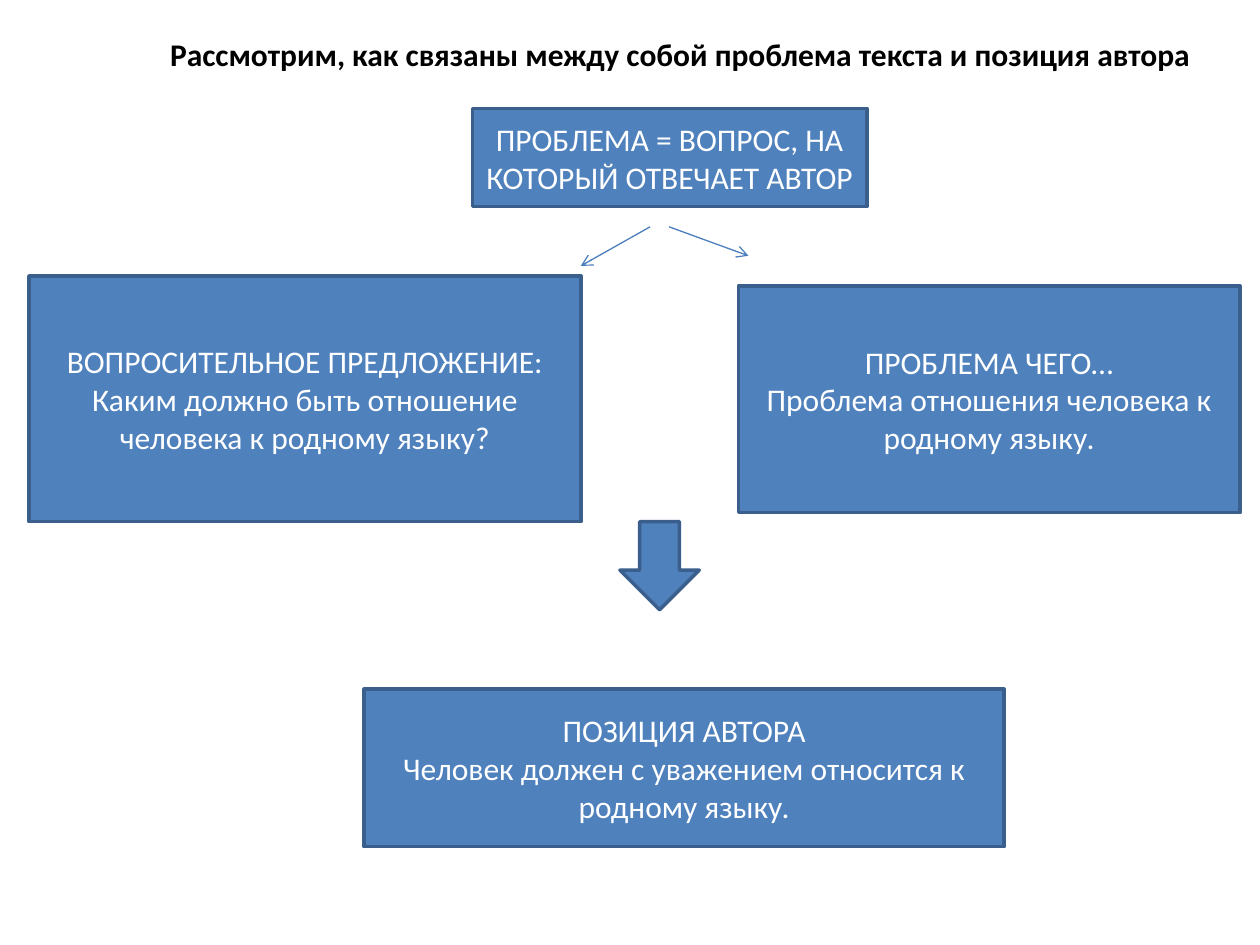
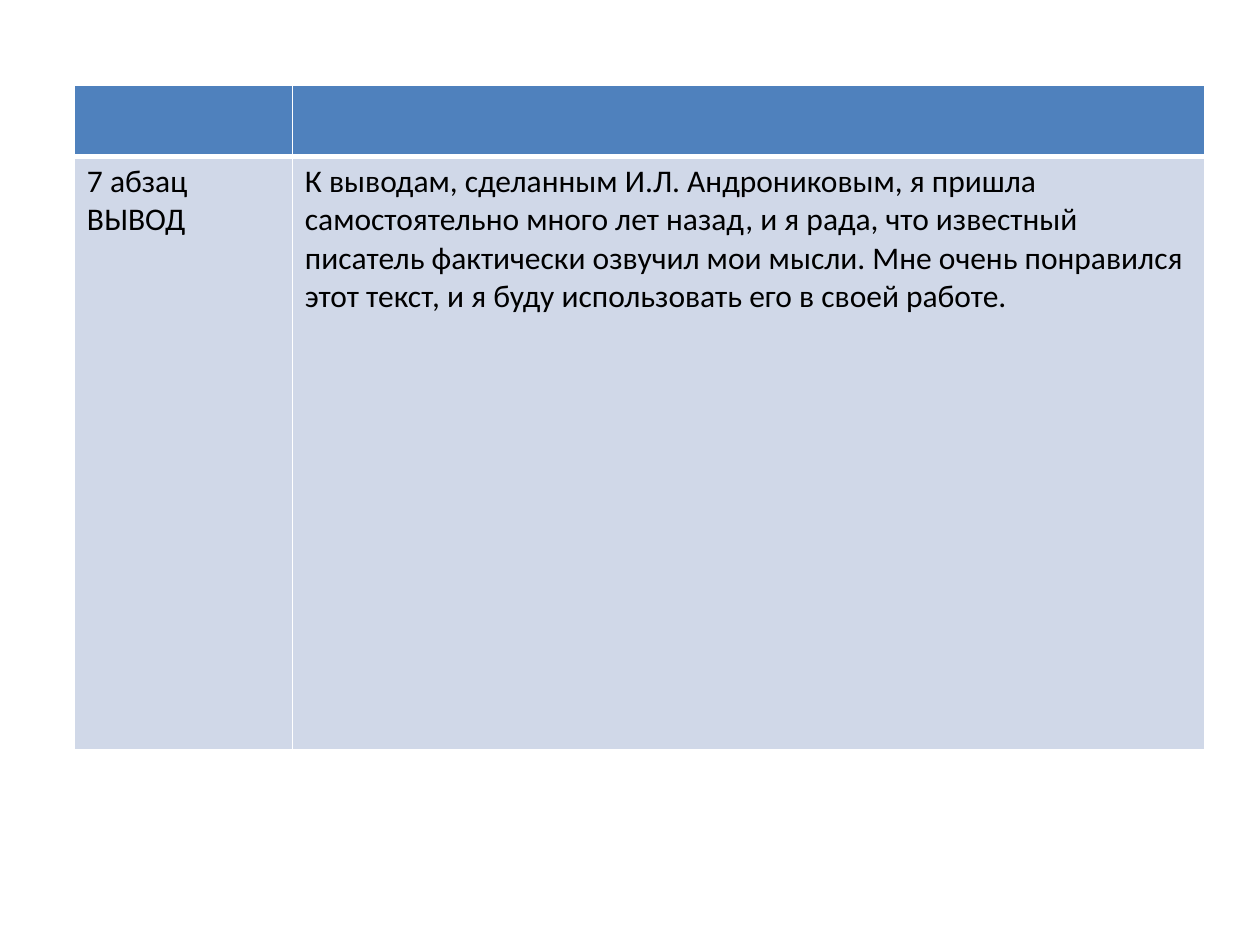
from lxml import etree
from pptx import Presentation
from pptx import util as u
from pptx.dml.color import RGBColor
from pptx.enum import shapes, text
from pptx.oxml.ns import qn

COLORS = {
    "blue": "4F81BD",
    "outline": "3A5F8C",
    "arrow": "4B7EBC",
    "pale": "D0D8E8",
    "white": "FFFFFF",
    "black": "000000",
}
FONT = "Calibri"
SIZE = u.Pt(18)


def rgb(name):
    return RGBColor.from_string(COLORS[name])


def write(tf, lines, color, align, bold=False):
    tf.text = "\n".join(lines)
    for p in tf.paragraphs:
        p.alignment = align
        p.font.name = FONT
        p.font.size = SIZE
        p.font.bold = bold
        p.font.color.rgb = rgb(color)


prs = Presentation()
prs.slide_width = u.Inches(10)
prs.slide_height = u.Inches(7.5)

s = prs.slides.add_slide(prs.slide_layouts[5])
title = s.shapes.title
title.left, title.top = u.Inches(1.25), u.Inches(0.23)
title.width, title.height = u.Inches(8.38), u.Inches(0.4)
tf = title.text_frame
write(tf, ["Рассмотрим, как связаны между собой проблема текста и позиция автора"],
      "black", text.PP_ALIGN.LEFT, bold=True)
tf.word_wrap = False
tf.auto_size = text.MSO_AUTO_SIZE.NONE
tf.vertical_anchor = text.MSO_ANCHOR.TOP

RECT = shapes.MSO_SHAPE.RECTANGLE
blocks = [
    (RECT, (3.75, 0.86, 3.13, 0.78), ["ПРОБЛЕМА = ВОПРОС, НА КОТОРЫЙ ОТВЕЧАЕТ АВТОР"]),
    (RECT, (0.23, 2.19, 4.38, 1.95), ["ВОПРОСИТЕЛЬНОЕ ПРЕДЛОЖЕНИЕ:",
                                      "Каким должно быть отношение человека к родному языку?"]),
    (RECT, (5.86, 2.27, 3.98, 1.8), ["ПРОБЛЕМА ЧЕГО…",
                                     "Проблема отношения человека к родному языку."]),
    (shapes.MSO_SHAPE.DOWN_ARROW, (4.92, 4.14, 0.63, 0.7), []),
    (RECT, (2.89, 5.47, 5.08, 1.25), ["ПОЗИЦИЯ АВТОРА",
                                      "Человек должен с уважением относится к родному языку."]),
]
for kind, box, lines in blocks:
    sp = s.shapes.add_shape(kind, *map(u.Inches, box))
    sp.shadow.inherit = False
    sp.fill.solid()
    sp.fill.fore_color.rgb = rgb("blue")
    sp.line.color.rgb = rgb("outline")
    sp.line.width = u.Pt(2)
    if lines:
        sp.text_frame.vertical_anchor = text.MSO_ANCHOR.MIDDLE
        write(sp.text_frame, lines, "white", text.PP_ALIGN.CENTER)

for ends in [(5.16, 1.8, 4.61, 2.11), (5.31, 1.8, 5.94, 2.03)]:
    branch = s.shapes.add_connector(shapes.MSO_CONNECTOR.STRAIGHT, *map(u.Inches, ends))
    branch.line.color.rgb = rgb("arrow")
    branch.line.width = u.Pt(0.75)
    etree.SubElement(branch.line._get_or_add_ln(), qn("a:tailEnd"), type="arrow")
    etree.SubElement(branch._element.spPr, qn("a:effectLst"))

s = prs.slides.add_slide(prs.slide_layouts[6])
rows = [
    [[], []],
    [["7 абзац", "ВЫВОД"],
     ["К выводам, сделанным И.Л. Андрониковым, я пришла самостоятельно много лет назад, "
      "и я рада, что известный писатель фактически озвучил мои мысли. Мне очень понравился "
      "этот текст, и я буду использовать его в своей работе."]],
]
table = s.shapes.add_table(2, 2, *map(u.Inches, (0.59, 0.68, 8.97, 5.27))).table
for column, width in zip(table.columns, (1.73, 7.24)):
    column.width = u.Inches(width)
for row, height in zip(table.rows, (0.56, 4.71)):
    row.height = u.Inches(height)

for i, row in enumerate(rows):
    for j, lines in enumerate(row):
        cell = table.cell(i, j)
        write(cell.text_frame, lines, "black", text.PP_ALIGN.LEFT)
        tc_pr = cell._tc.get_or_add_tcPr()
        for side in "LRTB":
            thick = (i, side) in [(0, "B"), (1, "T")]
            ln = etree.SubElement(tc_pr, qn(f"a:ln{side}"), w=str(u.Pt(3 if thick else 1)))
            fill = etree.SubElement(ln, qn("a:solidFill"))
            etree.SubElement(fill, qn("a:srgbClr"), val=COLORS["white"])
        cell.fill.solid()
        cell.fill.fore_color.rgb = rgb("pale" if i else "blue")

prs.save("out.pptx")
